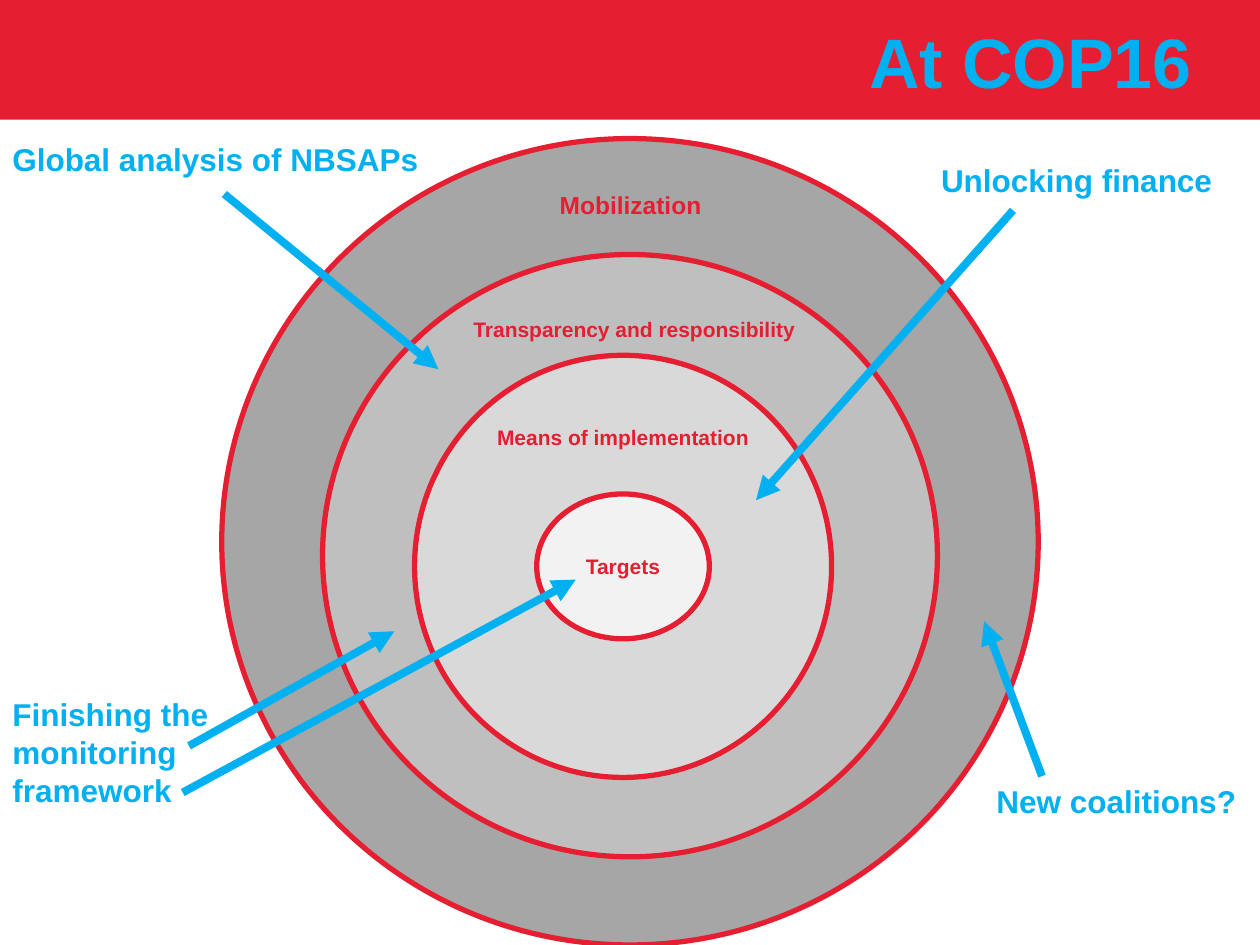
import pptx
import pptx.dml.color
import pptx.enum.shapes
import pptx.enum.text
import pptx.oxml
import pptx.oxml.ns
import pptx.util
from dataclasses import dataclass

COLUMNS, ROWS = 100, 75
CELL = pptx.util.Inches(0.1)


@dataclass(frozen=True)
class Theme:
    font: str = "Arial"
    red: str = "E51E31"
    blue: str = "00B0F0"
    rings: tuple = ("A6A6A6", "BFBFBF", "D9D9D9", "F2F2F2")
    title_size: int = 40
    callout_size: int = 18
    outer_size: int = 14
    ring_size: int = 12
    ring_line: float = 3
    arrow_line: float = 4.5


THEME = Theme()

# Each frame is left, top, width, height in grid cells.
RINGS = [
    (17.6, 11, 64.8, 64),
    (25.6, 20.2, 48.8, 47.8),
    (32.9, 28.2, 33.1, 33.5),
    (42.6, 39.2, 13.7, 11.5),
]
RING_LABELS = [
    ("Mobilization", (32.1, 14.6, 35.9, 5.6), THEME.outer_size),
    ("Transparency and responsibility", (36.1, 24.6, 28.5, 3), THEME.ring_size),
    ("Means of implementation", (36.6, 33.2, 25.7, 5), THEME.ring_size),
]
CALLOUTS = [
    ("Global analysis of NBSAPs", (0, 10.6, 34.6, 4), False),
    ("Unlocking finance", (73.7, 12.3, 23.8, 4), False),
    ("New coalitions?", (78.1, 61.6, 21.2, 4), False),
    ("Finishing the monitoring framework", (0, 54.7, 18.6, 10.1), True),
]
ARROWS = [
    ((17.8, 15.4), (34.8, 29.3)),
    ((80.4, 16.7), (60, 39.7)),
    ((82.7, 61.6), (78.1, 49.3)),
    ((14.5, 62.9), (45.7, 46)),
    ((15, 59.2), (31.3, 50.1)),
]


def cells(values):
    return [round(value * CELL) for value in values]


def rgb(value):
    return pptx.dml.color.RGBColor.from_string(value)


def set_all(target, formats):
    for name, value in formats.items():
        setattr(target, name, value)


def write_text(box, text, size, color, align="LEFT", anchor="TOP", wrap=True):
    set_all(box.text_frame, {
        "word_wrap": wrap,
        "vertical_anchor": getattr(pptx.enum.text.MSO_ANCHOR, anchor),
    })
    para = box.text_frame.paragraphs[0]
    para.alignment = getattr(pptx.enum.text.PP_ALIGN, align)
    span = para.add_run()
    span.text = text
    set_all(span.font, {"name": THEME.font, "size": pptx.util.Pt(size), "bold": True})
    span.font.color.rgb = rgb(color)


def add_label(page, text, frame, size, color, **layout):
    box = page.shapes.add_textbox(*cells(frame))
    write_text(box, text, size, color, **layout)


def add_filled(page, kind, frame, fill, line=None):
    shape = page.shapes.add_shape(getattr(pptx.enum.shapes.MSO_SHAPE, kind), *cells(frame))
    shape.shadow.inherit = False
    shape.fill.solid()
    shape.fill.fore_color.rgb = rgb(fill)
    if line:
        shape.line.color.rgb = rgb(line)
        shape.line.width = pptx.util.Pt(THEME.ring_line)
    else:
        shape.line.fill.background()
    return shape


def add_arrow(page, start, end):
    arrow = page.shapes.add_connector(
        pptx.enum.shapes.MSO_CONNECTOR.STRAIGHT, *cells(start + end))
    arrow.line.color.rgb = rgb(THEME.blue)
    arrow.line.width = pptx.util.Pt(THEME.arrow_line)
    head = pptx.oxml.parse_xml(
        f'<a:tailEnd {pptx.oxml.ns.nsdecls("a")} type="triangle"/>')
    arrow.line._get_or_add_ln().append(head)
    arrow._element.spPr.append(
        pptx.oxml.parse_xml(f'<a:effectLst {pptx.oxml.ns.nsdecls("a")}/>'))


def add_rings(page):
    """Draw the circles from the outermost inwards, then name each one."""
    for frame, fill in zip(RINGS, THEME.rings):
        ring = add_filled(page, "OVAL", frame, fill, THEME.red)
    write_text(ring, "Targets", THEME.ring_size, THEME.red, align="CENTER", anchor="MIDDLE")
    for text, frame, size in RING_LABELS:
        add_label(page, text, frame, size, THEME.red, align="CENTER")


def main():
    deck = pptx.Presentation()
    set_all(deck, {"slide_width": COLUMNS * CELL, "slide_height": ROWS * CELL})
    page = deck.slides.add_slide(deck.slide_layouts[6])
    add_filled(page, "RECTANGLE", (0, 0, COLUMNS, 9.5), THEME.red)
    add_rings(page)
    for start, end in ARROWS:
        add_arrow(page, start, end)
    for text, frame, wrap in CALLOUTS:
        add_label(page, text, frame, THEME.callout_size, THEME.blue, wrap=wrap)
    add_label(page, "At COP16", (68, 1, 32, 7.7), THEME.title_size, THEME.blue)
    deck.save("out.pptx")


if __name__ == "__main__":
    main()
